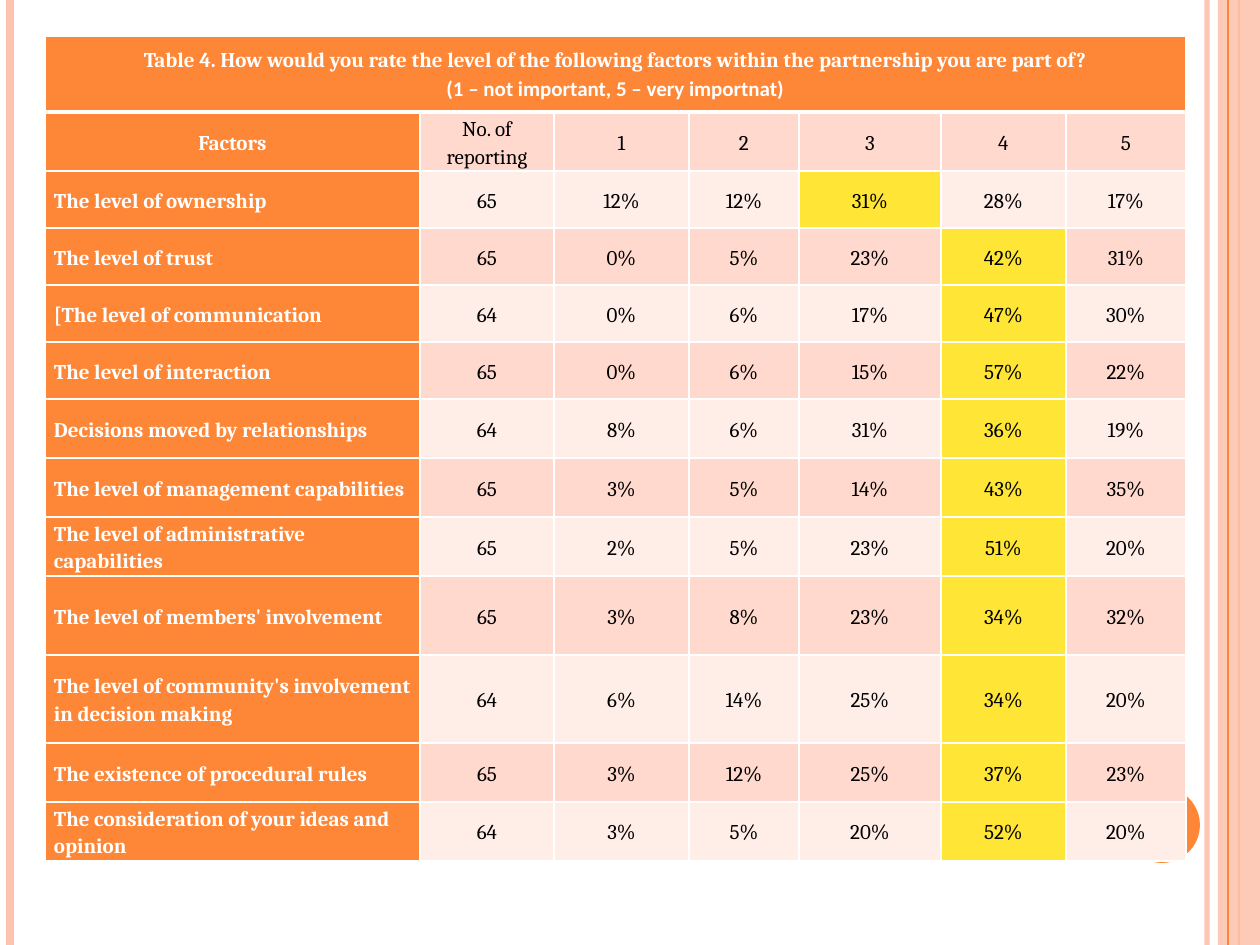
from lxml.etree import SubElement
from pptx import Presentation
from pptx.dml.color import RGBColor
from pptx.enum.shapes import MSO_CONNECTOR, MSO_SHAPE
from pptx.enum.text import MSO_ANCHOR, PP_ALIGN
from pptx.oxml.ns import qn
from pptx.util import Emu, Pt

WIDTH, HEIGHT = 1260, 945
SCALE = 914400 / 126
COLORS = {
    "orange": "FE8637", "pink": "FEC3AE", "white": "FFFFFF", "black": "000000",
    "dark": "FFD9CE", "light": "FFEDE8", "top": "FFE636",
}
COLS = [375, 134, 135, 110, 142, 125, 120]
ROWS = [76, 59] + [57] * 4 + [59] * 3 + [79, 88, 59, 59]
TITLE = [
    ("Table 4. How would you rate the level of the following factors "
     "within the partnership you are part of?", "Cambria"),
    ("(1 – not important, 5 – very importnat)", "Calibri"),
]
HEADS = ["Factors", "No. of reporting", "1", "2", "3", "4", "5"]
FACTORS = [
    ("The level of ownership", 65, [12, 12, 31, 28, 17]),
    ("The level of trust", 65, [0, 5, 23, 42, 31]),
    ("[The level of communication", 64, [0, 6, 17, 47, 30]),
    ("The level of interaction", 65, [0, 6, 15, 57, 22]),
    ("Decisions moved by relationships", 64, [8, 6, 31, 36, 19]),
    ("The level of management capabilities", 65, [3, 5, 14, 43, 35]),
    ("The level of administrative capabilities", 65, [2, 5, 23, 51, 20]),
    ("The level of members' involvement", 65, [3, 8, 23, 34, 32]),
    ("The level of community's involvement in decision making", 64,
     [6, 14, 25, 34, 20]),
    ("The existence of procedural rules", 65, [3, 12, 25, 37, 23]),
    ("The consideration of your ideas and opinion", 64, [3, 5, 20, 52, 20]),
]


def px(count):
    return Emu(round(count * SCALE))


def color(name):
    return RGBColor.from_string(COLORS[name])


def fade(shape, percent):
    """Set the opacity of the first solid colour in the shape."""
    tint = next(shape._element.spPr.iter(qn("a:srgbClr")))
    SubElement(tint, qn("a:alpha"), val=str(percent * 1000))


def add_rule(slide, x, name, width, opacity=100):
    """Draw a vertical line over the full slide height."""
    rule = slide.shapes.add_connector(
        MSO_CONNECTOR.STRAIGHT, px(x), 0, px(x), px(HEIGHT))
    rule.line.color.rgb = color(name)
    rule.line.width = Pt(width)
    SubElement(rule._element.spPr, qn("a:effectLst"))
    if opacity < 100:
        fade(rule, opacity)


def add_block(slide, kind, box, name, opacity=100):
    block = slide.shapes.add_shape(kind, *map(px, box))
    block.shadow.inherit = False
    block.fill.solid()
    block.fill.fore_color.rgb = color(name)
    block.line.fill.background()
    if opacity < 100:
        fade(block, opacity)


def write(para, text, font="Cambria", name="black", bold=False,
          align=PP_ALIGN.CENTER):
    para.alignment = align
    para.line_spacing = 1.15
    run = para.add_run()
    run.text = text
    run.font.name = font
    run.font.size = Pt(12)
    run.font.bold = bold
    run.font.color.rgb = color(name)


def add_borders(cell, **widths):
    """Draw white borders, 1 pt wide unless a side gets its own width."""
    props = cell._tc.get_or_add_tcPr()
    for side in "LRTB":
        edge = SubElement(props, qn(f"a:ln{side}"),
                          w=str(Pt(widths.get(side, 1))))
        fill = SubElement(edge, qn("a:solidFill"))
        SubElement(fill, qn("a:srgbClr"), val=COLORS["white"])


def style(cell, name, **widths):
    add_borders(cell, **widths)
    cell.fill.solid()
    cell.fill.fore_color.rgb = color(name)
    cell.vertical_anchor = MSO_ANCHOR.MIDDLE
    cell.margin_left = cell.margin_right = px(9)
    cell.margin_top = cell.margin_bottom = 0


def fill_title(table):
    for col in range(len(COLS)):
        style(table.cell(0, col), "orange", B=3)
    cell = table.cell(0, 0)
    cell.merge(table.cell(0, len(COLS) - 1))
    frame = cell.text_frame
    for i, (text, font) in enumerate(TITLE):
        para = frame.add_paragraph() if i else frame.paragraphs[0]
        write(para, text, font=font, name="white", bold=True)


def fill_heads(table):
    for col, text in enumerate(HEADS):
        cell, first = table.cell(1, col), col == 0
        style(cell, "orange" if first else "dark", T=3)
        write(cell.text_frame.paragraphs[0], text,
              name="white" if first else "black", bold=first)


def fill_factor(table, row, label, count, rates):
    """Fill one row and highlight its highest rate."""
    band = "dark" if row % 2 else "light"
    first = table.cell(row, 0)
    style(first, "orange")
    write(first.text_frame.paragraphs[0], label, name="white", bold=True,
          align=PP_ALIGN.LEFT)
    texts = [str(count)] + [f"{rate}%" for rate in rates]
    peak = rates.index(max(rates)) + 2
    for col, text in enumerate(texts, 1):
        cell = table.cell(row, col)
        style(cell, "top" if col == peak else band)
        write(cell.text_frame.paragraphs[0], text)


def add_ratings(slide):
    table = slide.shapes.add_table(
        len(ROWS), len(COLS), px(45), px(36), px(sum(COLS)),
        px(sum(ROWS))).table
    for col, width in zip(table.columns, COLS):
        col.width = px(width)
    for row, height in zip(table.rows, ROWS):
        row.height = px(height)
    fill_title(table)
    fill_heads(table)
    for row, factor in enumerate(FACTORS, 2):
        fill_factor(table, row, *factor)


def main():
    deck = Presentation()
    deck.slide_width, deck.slide_height = px(WIDTH), px(HEIGHT)
    slide = deck.slides.add_slide(deck.slide_layouts[6])
    add_rule(slide, 1207, "pink", 3, opacity=93)
    add_rule(slide, 10, "pink", 4.5)
    add_rule(slide, 1239, "orange", 1.5)
    add_block(slide, MSO_SHAPE.RECTANGLE, (1218, 0, 42, HEIGHT), "pink",
              opacity=87)
    add_rule(slide, 1228, "orange", 0.75)
    add_block(slide, MSO_SHAPE.OVAL, (1124, 787, 76, 76), "orange")
    add_ratings(slide)
    deck.save("out.pptx")


if __name__ == "__main__":
    main()
